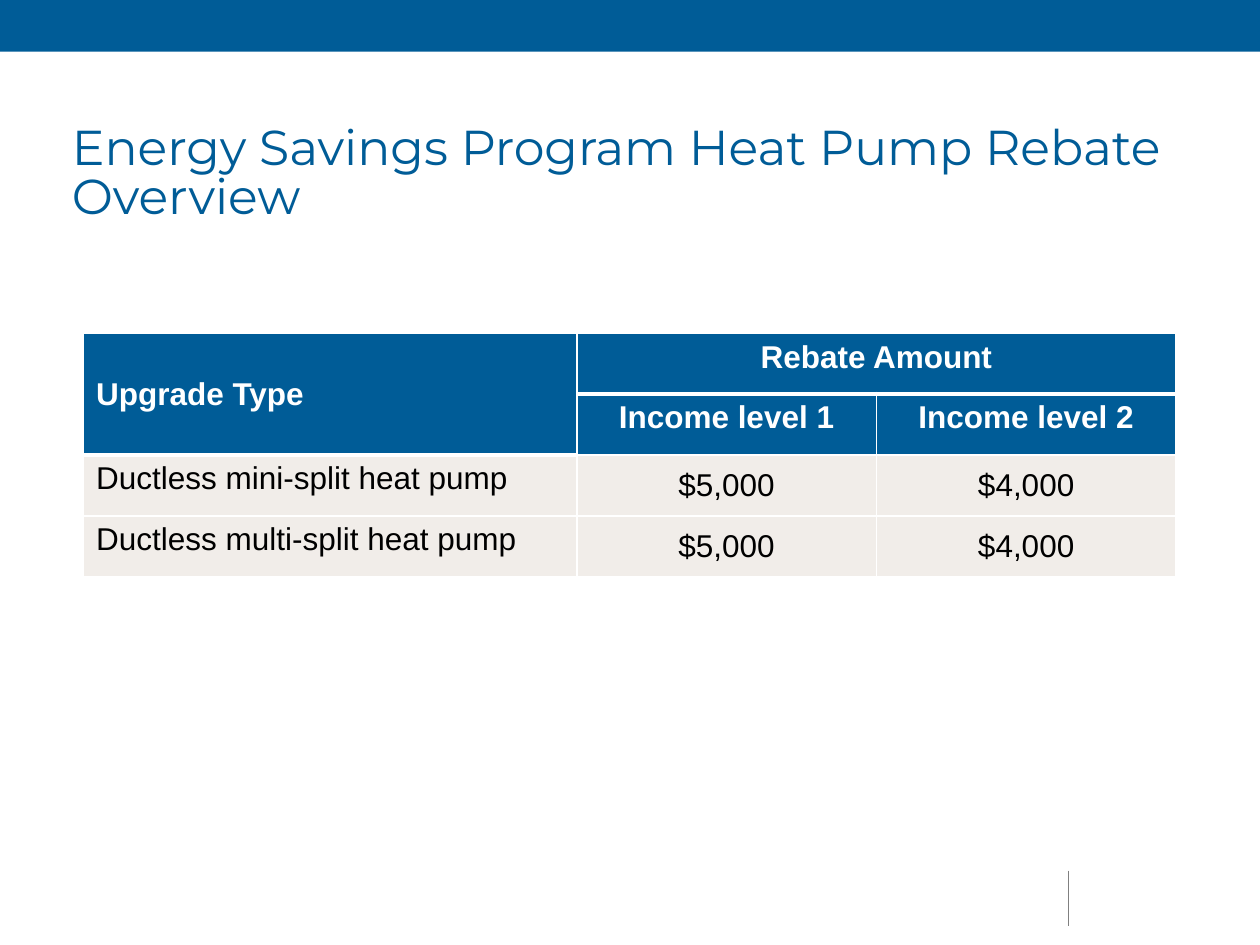
from dataclasses import dataclass

from lxml.etree import SubElement
from pptx import Presentation
from pptx.dml.color import RGBColor
from pptx.enum.shapes import MSO_CONNECTOR, MSO_SHAPE
from pptx.enum.text import MSO_ANCHOR as Anchor, PP_ALIGN as Align
from pptx.oxml.ns import qn
from pptx.util import Pt


@dataclass
class Theme:
    blue: str = "005C97"
    sand: str = "F1EDE9"
    white: str = "FFFFFF"
    black: str = "000000"
    grey: str = "808080"
    title_font: str = "Montserrat"
    table_font: str = "Arial"
    title_size: int = 28
    table_size: int = 18


theme = Theme()


def style_text(paragraph, font_name, size, color, bold=False):
    for span in paragraph.runs:
        span.font.name = font_name
        span.font.size = Pt(size)
        span.font.bold = bold
        span.font.color.rgb = RGBColor.from_string(color)


def add_border(cell, side, width):
    line = SubElement(cell._tc.get_or_add_tcPr(), qn(f"a:ln{side}"), w=str(Pt(width)))
    fill = SubElement(line, qn("a:solidFill"))
    SubElement(fill, qn("a:srgbClr"), val=theme.white)


deck = Presentation()
deck.slide_width, deck.slide_height = Pt(720), Pt(540)
page = deck.slides.add_slide(deck.slide_layouts[6])

banner = page.shapes.add_shape(MSO_SHAPE.RECTANGLE, 0, 0, Pt(720), Pt(29.5))
banner.shadow.inherit = False
banner.fill.solid()
banner.fill.fore_color.rgb = RGBColor.from_string(theme.blue)
banner.line.fill.background()

footer_rule = page.shapes.add_connector(
    MSO_CONNECTOR.STRAIGHT, Pt(610.5), Pt(497.5), Pt(610.5), Pt(529)
)
footer_rule.line.color.rgb = RGBColor.from_string(theme.grey)
footer_rule.line.width = Pt(0.5)
SubElement(footer_rule._element.spPr, qn("a:effectLst"))

title_box = page.shapes.add_textbox(Pt(34), Pt(68.5), Pt(652), Pt(63))
title_box.text_frame.word_wrap = True
title_box.text_frame.vertical_anchor = Anchor.MIDDLE
title_box.text_frame.text = "Energy Savings Program Heat Pump Rebate Overview"
title = title_box.text_frame.paragraphs[0]
title.line_spacing = Pt(28)
style_text(title, theme.title_font, theme.title_size, theme.blue)

rows = [
    ["Upgrade Type", "Rebate Amount", ""],
    ["", "Income level 1", "Income level 2"],
    ["Ductless mini-split heat pump", "$5,000", "$4,000"],
    ["Ductless multi-split heat pump", "$5,000", "$4,000"],
]
column_widths = [281.8, 171.2, 171.2]
row_height = 34.8

rebates = page.shapes.add_table(
    len(rows), len(column_widths), Pt(47.8), Pt(190.4),
    Pt(sum(column_widths)), Pt(row_height * len(rows)),
).table
for column, width in zip(rebates.columns, column_widths):
    column.width = Pt(width)

for row_index, values in enumerate(rows):
    rebates.rows[row_index].height = Pt(row_height)
    is_header = row_index < 2
    for column_index, value in enumerate(values):
        cell = rebates.cell(row_index, column_index)
        is_label = column_index == 0
        heavy_top = row_index == (2 if is_label else 1)
        heavy_bottom = row_index == 0 or (is_label and row_index == 1)
        add_border(cell, "L", 1)
        add_border(cell, "R", 1)
        add_border(cell, "T", 3 if heavy_top else 1)
        add_border(cell, "B", 3 if heavy_bottom else 1)
        cell.fill.solid()
        cell.fill.fore_color.rgb = RGBColor.from_string(
            theme.blue if is_header else theme.sand
        )
        cell.vertical_anchor = Anchor.MIDDLE if is_header == is_label else Anchor.TOP
        cell.text_frame.text = value
        para = cell.text_frame.paragraphs[0]
        para.alignment = Align.LEFT if is_label else Align.CENTER
        style_text(
            para, theme.table_font, theme.table_size,
            theme.white if is_header else theme.black, is_header,
        )

rebates.cell(0, 0).merge(rebates.cell(1, 0))
rebates.cell(0, 1).merge(rebates.cell(0, 2))

deck.save("out.pptx")
